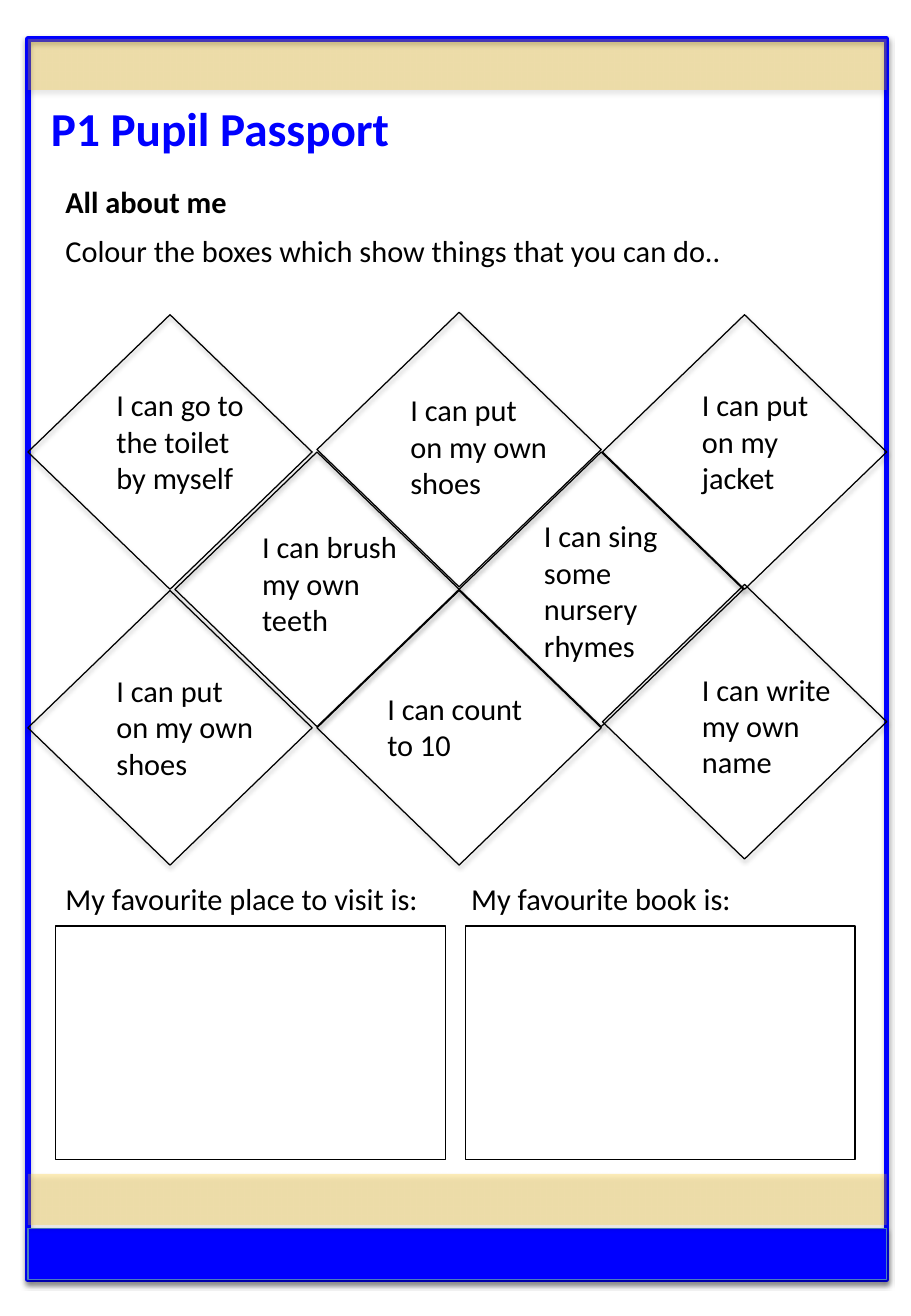
from lxml import etree
from pptx import Presentation
from pptx.dml.color import RGBColor
from pptx.enum.shapes import MSO_SHAPE as Preset
from pptx.oxml.ns import qn
from pptx.util import Inches, Pt

BLUE = RGBColor(0x00, 0x00, 0xFF)
EDGE_BLUE = RGBColor(0x4B, 0x7E, 0xBC)
OUTLINE_BLUE = RGBColor(0x05, 0x46, 0x97)
GOLD = RGBColor(0xFE, 0xC3, 0x09)
BLACK = RGBColor(0x00, 0x00, 0x00)

LEFT, WIDTH = 0.23, 7.07
BAND_HEIGHT = 0.42
DIAMOND_WIDTH, DIAMOND_HEIGHT = 2.34, 2.26
LABEL_WIDTH = 1.39

# Diamond left and top, label left, top and height, label
SKILLS = [
    (0.23, 2.59, 0.86, 3.13, 1.01, "I can go to the toilet by myself"),
    (2.61, 2.57, 3.28, 3.17, 1.01, "I can put on my own shoes"),
    (4.96, 2.59, 5.68, 3.13, 1.01, "I can put on my jacket"),
    (1.44, 3.72, 2.06, 4.30, 1.01, "I can brush my own teeth"),
    (3.78, 3.72, 4.38, 4.21, 1.31, "I can sing some nursery rhymes"),
    (4.96, 4.81, 5.68, 5.47, 1.01, "I can write my own name"),
    (0.23, 4.86, 0.86, 5.48, 1.01, "I can put on my own shoes"),
    (2.61, 4.86, 3.09, 5.63, 0.71, "I can count to 10"),
]

# Prompt left and width, answer box left, prompt
FAVOURITES = [
    (0.44, 3.39, 0.46, "My favourite place to visit is:"),
    (3.78, 3.02, 3.83, "My favourite book is:"),
]


def add_color(parent, color, alpha=None):
    """Append an srgbClr element, see-through if alpha (percent) is given."""
    element = etree.SubElement(parent, qn("a:srgbClr"), val=str(color))
    if alpha is not None:
        etree.SubElement(element, qn("a:alpha"), val=str(alpha * 1000))


class PassportPage:
    font_name = "Calibri"
    text_size = 18

    def __init__(self, page):
        self.page = page

    def shape(self, preset, left, top, width, height, fill=None, alpha=None,
              line=None, line_width=0.75, shadow=True):
        shape = self.page.shapes.add_shape(
            preset, Inches(left), Inches(top), Inches(width), Inches(height))
        shape.shadow.inherit = False
        if fill is None:
            shape.fill.background()
        else:
            shape.fill.solid()
            shape.fill.fore_color.rgb = fill
        if alpha is not None:
            solid = shape.element.spPr.find(qn("a:solidFill"))
            solid.clear()
            add_color(solid, fill, alpha)
        if line is None:
            shape.line.fill.background()
        else:
            shape.line.color.rgb = line
            shape.line.width = Pt(line_width)
        if shadow:
            self.drop_shadow(shape)
        return shape

    def drop_shadow(self, shape):
        effects = shape.element.spPr.find(qn("a:effectLst"))
        shadow = etree.SubElement(
            effects, qn("a:outerShdw"), blurRad=str(Pt(3.1)),
            dist=str(Pt(1.8)), dir="5400000", rotWithShape="0")
        add_color(shadow, BLACK, 35)

    def band(self, top, **style):
        return self.shape(Preset.RECTANGLE, LEFT, top, WIDTH, BAND_HEIGHT, **style)

    def text(self, left, top, width, height, words, size=None, color=BLACK,
             bold=False):
        box = self.page.shapes.add_textbox(
            Inches(left), Inches(top), Inches(width), Inches(height))
        box.text_frame.word_wrap = True
        box.text_frame.text = words
        font = box.text_frame.paragraphs[0].runs[0].font
        font.name = self.font_name
        font.size = Pt(size or self.text_size)
        font.bold = bold
        font.color.rgb = color
        return box

    def title(self, words):
        box = self.text(LEFT, 0.77, WIDTH, 0.57, words, 28, BLUE, True)
        box.text_frame.margin_left = Inches(0.19)
        span = box.text_frame.paragraphs[0].runs[0]
        outline = etree.Element(qn("a:ln"), w=str(Pt(1)))
        add_color(etree.SubElement(outline, qn("a:solidFill")), OUTLINE_BLUE)
        span.font._element.insert(0, outline)


def main():
    deck = Presentation()
    deck.slide_width, deck.slide_height = Inches(7.5), Inches(10.83)
    passport = PassportPage(deck.slides.add_slide(deck.slide_layouts[6]))

    passport.shape(Preset.RECTANGLE, LEFT, 0.32, WIDTH, 10.21,
                   line=BLUE, line_width=3.25)
    passport.band(0.32, fill=GOLD, alpha=28)
    passport.band(10.11, fill=BLUE, line=EDGE_BLUE)
    passport.band(9.66, fill=GOLD, alpha=28)

    passport.title("P1 Pupil Passport")
    passport.text(0.44, 1.46, 2.84, 0.4, "All about me", bold=True)
    passport.text(0.44, 1.86, 6.86, 0.71,
                  "Colour the boxes which show things that you can do..")

    for left, top, *_ in SKILLS:
        passport.shape(Preset.DIAMOND, left, top, DIAMOND_WIDTH, DIAMOND_HEIGHT,
                       line=BLACK)
    for _, _, left, top, height, label in SKILLS:
        passport.text(left, top, LABEL_WIDTH, height, label)

    for left, width, box_left, prompt in FAVOURITES:
        passport.text(left, 7.19, width, 0.71, prompt)
        passport.shape(Preset.RECTANGLE, box_left, 7.62, 3.21, 1.92,
                       line=BLACK, shadow=False)

    deck.save("out.pptx")


if __name__ == "__main__":
    main()
